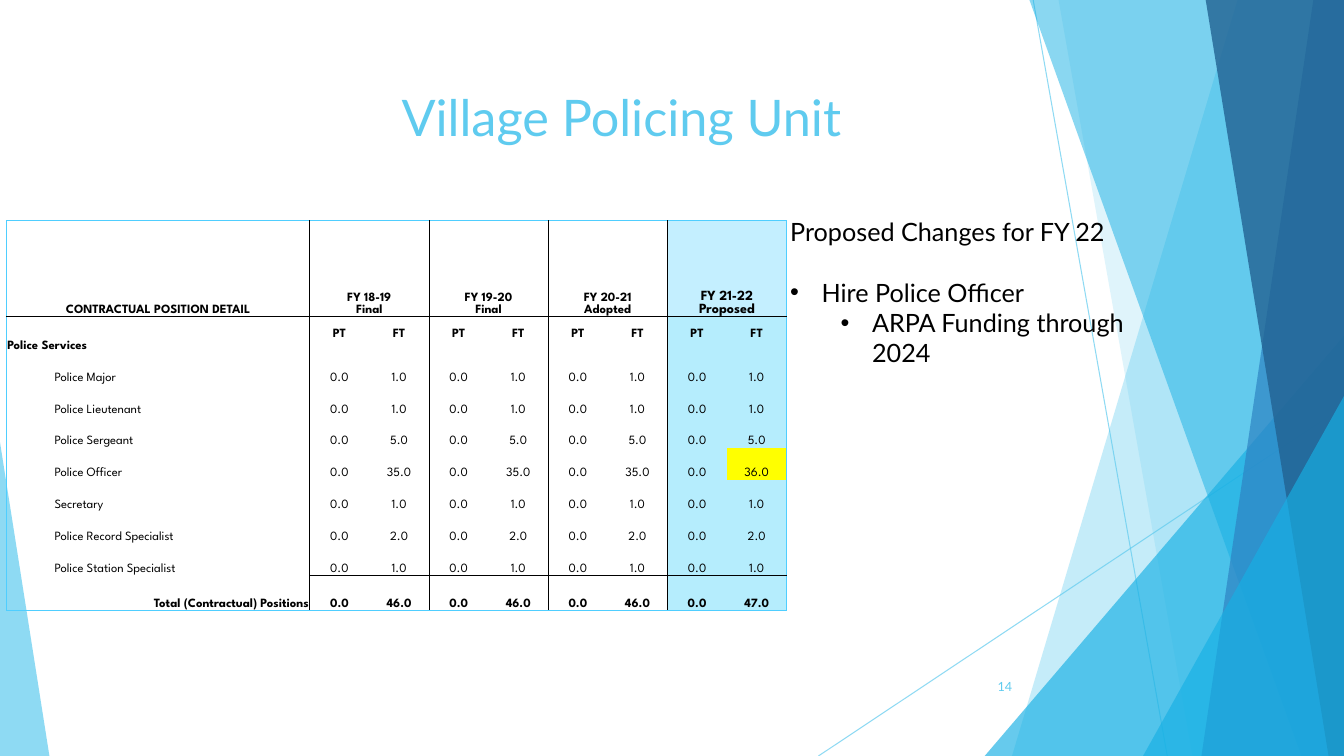
from dataclasses import dataclass

from lxml import etree
from pptx import Presentation
from pptx.dml.color import RGBColor
from pptx.enum.shapes import MSO_CONNECTOR, MSO_SHAPE
from pptx.enum.text import MSO_ANCHOR, MSO_AUTO_SIZE, PP_ALIGN
from pptx.oxml import parse_xml
from pptx.oxml.ns import nsdecls, qn
from pptx.util import Pt

STRAIGHT = MSO_CONNECTOR.STRAIGHT
TRIANGLE = MSO_SHAPE.ISOSCELES_TRIANGLE
LEFT, CENTER, RIGHT = PP_ALIGN.LEFT, PP_ALIGN.CENTER, PP_ALIGN.RIGHT
TOP, MIDDLE, BOTTOM = MSO_ANCHOR.TOP, MSO_ANCHOR.MIDDLE, MSO_ANCHOR.BOTTOM

SLIDE_W, SLIDE_H = 960, 540
BODY_FONT, TABLE_FONT = "Lato", "League Spartan"
SKY, CYAN, BLUE, NAVY = "5FCBEF", "17B0E4", "2E83C3", "226292"
BLACK, FRAME, HEAD_TINT, TINT, YELLOW = "000000", "4FCEFF", "C4EFFF", "B5EDFD", "FFFF00"


@dataclass
class Ray:
    x1: float
    y1: float
    x2: float
    y2: float


@dataclass
class Facet:
    """Band reaching the right slide edge, with a slanted left side."""
    top_x: float
    bottom_x: float
    color: str
    alpha: int


@dataclass
class Corner:
    """Right-angled triangle standing on the bottom slide edge."""
    left: float
    top: float
    width: float
    apex: int
    color: str
    alpha: int


@dataclass
class Note:
    text: str
    indent: float = 0
    level: int = 0
    space_before: float = 0


RAYS = [Ray(738, 0, 833.8, SLIDE_H), Ray(SLIDE_W, 290.2, 584.6, SLIDE_H)]
FACETS = [
    Facet(884.2, 722.9, SKY, 36),
    Facet(756, 851.8, SKY, 20),
    Corner(703.4, 239.8, 256.6, 1, CYAN, 66),
    Facet(735.1, 929.5, CYAN, 50),
    Facet(938.2, 858.2, BLUE, 70),
    Facet(861.1, 949, NAVY, 80),
    Corner(816.5, 283, 143.5, 1, CYAN, 66),
    Corner(0, 316, 35.3, 0, SKY, 70),
]
NOTES = [
    Note("Proposed Changes for FY 22"),
    Note("Hire Police Officer", 22.5, 0, 21.6),
    Note("ARPA Funding through 2024", 58.5, 1),
]
YEARS = [("FY 18-19", "Final"), ("FY 19-20", "Final"),
         ("FY 20-21", "Adopted"), ("FY 21-22", "Proposed")]
FULL_TIME = {
    "Police Major": ["1.0"] * 4,
    "Police Lieutenant": ["1.0"] * 4,
    "Police Sergeant": ["5.0"] * 4,
    "Police Officer": ["35.0"] * 3 + ["36.0"],
    "Secretary": ["1.0"] * 4,
    "Police Record Specialist": ["2.0"] * 4,
    "Police Station Specialist": ["1.0"] * 4,
    "Total (Contractual) Positions": ["46.0"] * 3 + ["47.0"],
}
COL_WIDTHS = [33.8, 182.9] + [42.6] * 8
ROW_HEIGHTS = [68.4, 25.8] + [22.75] * 7 + [25.2]
LAST_COL, LAST_ROW = len(COL_WIDTHS) - 1, len(ROW_HEIGHTS) - 1


def rgb(color: str) -> RGBColor:
    return RGBColor.from_string(color)


def add_run(paragraph, text: str, size: float, color: str, font=BODY_FONT, bold=False) -> None:
    run = paragraph.add_run()
    run.text = text
    run.font.size, run.font.name, run.font.bold = Pt(size), font, bold
    run.font.color.rgb = rgb(color)


def set_alpha(shape, alpha: int) -> None:
    color = shape._element.spPr.find(".//" + qn("a:srgbClr"))
    etree.SubElement(color, qn("a:alpha")).set("val", str(alpha * 1000))


def draw_ray(shapes, ray: Ray) -> None:
    line = shapes.add_connector(STRAIGHT, Pt(ray.x1), Pt(ray.y1), Pt(ray.x2), Pt(ray.y2))
    line.line.color.rgb = rgb(SKY)
    line.line.width = Pt(0.75)
    set_alpha(line, 70)
    etree.SubElement(line._element.spPr, qn("a:effectLst"))


def draw_facet(shapes, facet: Facet | Corner) -> None:
    if isinstance(facet, Corner):
        shape = shapes.add_shape(TRIANGLE, Pt(facet.left), Pt(facet.top),
                                 Pt(facet.width), Pt(SLIDE_H - facet.top))
        shape.adjustments[0] = facet.apex
    else:
        outline = shapes.build_freeform(Pt(facet.top_x), Pt(-0.7))
        outline.add_line_segments([(Pt(SLIDE_W), Pt(-0.7)), (Pt(SLIDE_W), Pt(SLIDE_H)),
                                   (Pt(facet.bottom_x), Pt(SLIDE_H))])
        shape = outline.convert_to_shape()
    shape.shadow.inherit = False
    shape.fill.solid()
    shape.fill.fore_color.rgb = rgb(facet.color)
    set_alpha(shape, facet.alpha)
    shape.line.fill.background()


def write_note(paragraph, note: Note) -> None:
    add_run(paragraph, note.text, 18, BLACK)
    paragraph.level = note.level
    paragraph.space_before = Pt(note.space_before)
    if note.indent:
        properties = paragraph._p.get_or_add_pPr()
        properties.set("marL", str(Pt(note.indent)))
        properties.set("indent", str(Pt(-22.5)))
        etree.SubElement(properties, qn("a:buFont")).set("typeface", "Arial")
        etree.SubElement(properties, qn("a:buChar")).set("char", "•")


def border_colors(row: int, col: int, end_col: int) -> dict[str, str | None]:
    in_years = col >= 2
    top = {0: FRAME, 1: BLACK, LAST_ROW: BLACK if in_years else None}
    bottom = {0: BLACK, LAST_ROW - 1: BLACK if in_years else None, LAST_ROW: FRAME}
    return {
        "lnL": FRAME if col == 0 else BLACK if col % 2 == 0 else None,
        "lnR": FRAME if end_col == LAST_COL else BLACK if end_col % 2 else None,
        "lnT": top.get(row),
        "lnB": bottom.get(row),
    }


def format_cell(cell, row: int, col: int, lines: tuple[str, ...]) -> None:
    cell.margin_left = cell.margin_right = cell.margin_top = Pt(0.7)
    cell.margin_bottom = 0
    cell.vertical_anchor = MIDDLE if row == 1 and col >= 2 else BOTTOM
    in_proposed = col >= LAST_COL - 1
    if in_proposed:
        changed = lines == ("36.0",)
        cell.fill.solid()
        cell.fill.fore_color.rgb = rgb(YELLOW if changed else HEAD_TINT if row == 0 else TINT)
    else:
        cell.fill.background()
    end_col = col + cell.span_width - 1 if cell.is_merge_origin else col
    for place, (tag, color) in enumerate(border_colors(row, col, end_col).items()):
        paint = f'<a:solidFill><a:srgbClr val="{color}"/></a:solidFill>' if color else "<a:noFill/>"
        border = parse_xml(f'<a:{tag} {nsdecls("a")} w="{Pt(0.5)}">{paint}</a:{tag}>')
        cell._tc.get_or_add_tcPr().insert(place, border)
    paragraph = cell.text_frame.paragraphs[0]
    paragraph.font.size = Pt(9)
    if row == 0 or col >= 2:
        paragraph.alignment = CENTER
    else:
        paragraph.alignment = RIGHT if row == LAST_ROW else LEFT
    for number, text in enumerate(lines):
        if number:
            paragraph.add_line_break()
        size = 10 if row == 0 and in_proposed else 9
        add_run(paragraph, text, size, BLACK, TABLE_FONT, row in (0, 1, LAST_ROW))


def position_rows() -> list[list[tuple[str, ...]]]:
    header = [("CONTRACTUAL POSITION DETAIL",), ()]
    for year in YEARS:
        header += [year, ()]
    rows = [header, [("Police Services",), ()] + [("PT",), ("FT",)] * len(YEARS)]
    for position, counts in FULL_TIME.items():
        rows.append([(), (position,)] + [(n,) for count in counts for n in ("0.0", count)])
    return rows


def draw_positions(shapes) -> None:
    rows = position_rows()
    table = shapes.add_table(len(rows), len(COL_WIDTHS), Pt(4.5), Pt(157.5),
                             Pt(sum(COL_WIDTHS)), Pt(sum(ROW_HEIGHTS))).table
    table.first_row = table.horz_banding = False
    for column, width in zip(table.columns, COL_WIDTHS):
        column.width = Pt(width)
    for table_row, height in zip(table.rows, ROW_HEIGHTS):
        table_row.height = Pt(height)
    for col in range(0, LAST_COL, 2):
        table.cell(0, col).merge(table.cell(0, col + 1))
    table.cell(1, 0).merge(table.cell(1, 1))
    for row, contents in enumerate(rows):
        for col, lines in enumerate(contents):
            format_cell(table.cell(row, col), row, col, lines)


def main() -> None:
    deck = Presentation()
    deck.slide_width, deck.slide_height = Pt(SLIDE_W), Pt(SLIDE_H)
    slide = deck.slides.add_slide(deck.slide_layouts[5])
    shapes = slide.shapes

    # Backdrop
    for ray in RAYS:
        draw_ray(shapes, ray)
    for facet in FACETS:
        draw_facet(shapes, facet)

    # Title
    title = shapes.title
    title.left, title.top, title.width, title.height = Pt(86.4), Pt(57.6), Pt(715), Pt(62.6)
    title.text_frame.auto_size = MSO_AUTO_SIZE.NONE
    title.text_frame.vertical_anchor = TOP
    heading = title.text_frame.paragraphs[0]
    heading.alignment = CENTER
    add_run(heading, "Village Policing Unit", 36, SKY)

    # Slide number
    page = shapes.add_textbox(Pt(676), Pt(476), Pt(54), Pt(28.8)).text_frame
    page.word_wrap = True
    page.vertical_anchor = MIDDLE
    page.paragraphs[0].alignment = RIGHT
    add_run(page.paragraphs[0], "14", 9, SKY)

    # Proposed changes
    changes = shapes.add_textbox(Pt(557.3), Pt(151.2), Pt(294.5), Pt(138.2)).text_frame
    changes.word_wrap = True
    for number, note in enumerate(NOTES):
        write_note(changes.add_paragraph() if number else changes.paragraphs[0], note)

    # Position table
    draw_positions(shapes)
    deck.save("out.pptx")


if __name__ == "__main__":
    main()
